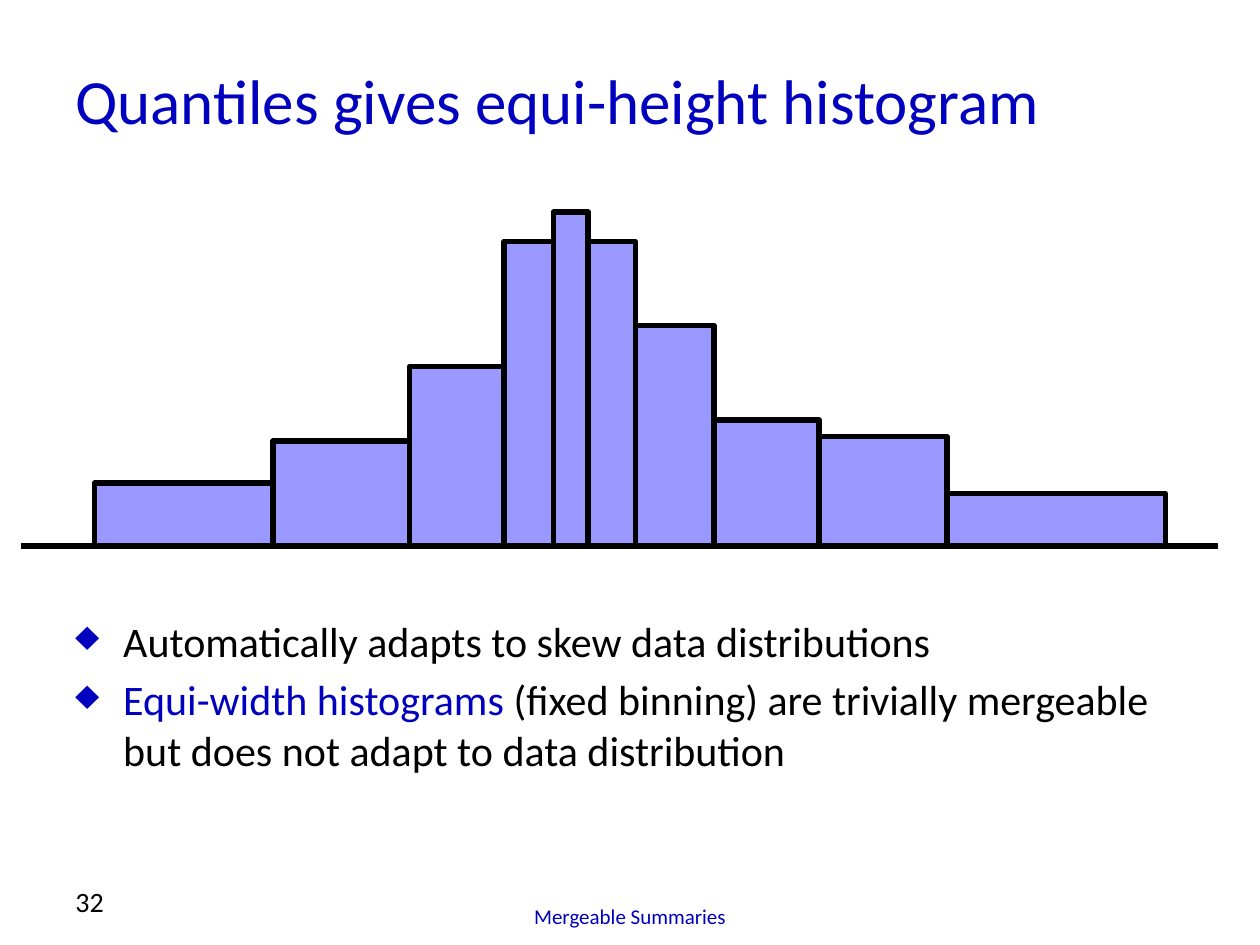
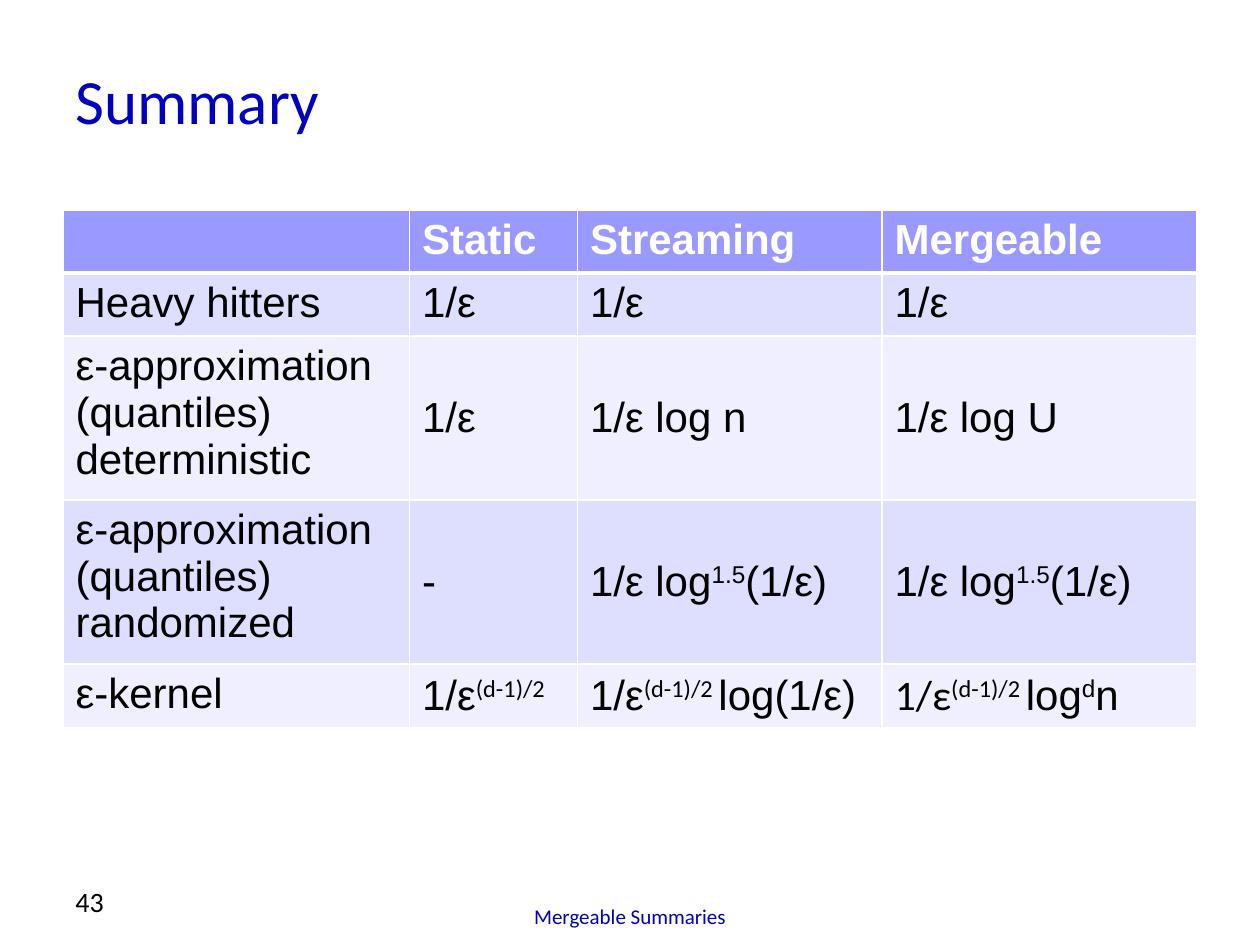
from itertools import accumulate
from lxml.etree import SubElement
from pptx import Presentation
from pptx.dml.color import RGBColor
from pptx.enum.shapes import MSO_CONNECTOR as Connector, MSO_SHAPE as Shape
from pptx.enum.text import MSO_ANCHOR as Anchor, PP_ALIGN as Align
from pptx.oxml.ns import qn
from pptx.util import Inches, Pt

COLORS = {
    "blue": "0000BE",
    "bar": "9999FF",
    "band_dark": "DEDEFF",
    "band_light": "EFEFFF",
    "ink": "000000",
    "white": "FFFFFF",
}
COLUMNS, ROWS = 120, 90
CELL = Inches(10) // COLUMNS


def grid(*units):
    return [round(unit * CELL) for unit in units]


def rgb(name):
    return RGBColor.from_string(COLORS[name])


class Deck:
    body_font = "Calibri"
    table_font = "Arial"
    footer = "Mergeable Summaries"

    def __init__(self):
        self.show = Presentation()
        self.show.slide_width, self.show.slide_height = grid(COLUMNS, ROWS)
        self.slide = None

    def start(self, title, number):
        self.slide = self.show.slides.add_slide(self.show.slide_layouts[6])
        self.text((6, 4, 114, 11), title, 36, "blue", Anchor.MIDDLE)
        self.text((31, 83, 58, 6), self.footer, 12, "blue", Anchor.BOTTOM, Align.CENTER)
        self.text((6, 82, 28, 6), number, 16, "ink", Anchor.BOTTOM)

    def run(self, paragraph, words, size, color, font=None, bold=False, raised=False):
        run = paragraph.add_run()
        run.text = words
        run.font.size = Pt(size)
        run.font.name = font or self.body_font
        run.font.bold = bold
        run.font.color.rgb = rgb(color)
        if raised:
            run.font._element.set("baseline", "30000")

    def frame(self, area, anchor):
        frame = self.slide.shapes.add_textbox(*grid(*area)).text_frame
        frame.word_wrap = True
        frame.vertical_anchor = anchor
        return frame

    def text(self, area, words, size, color, anchor, align=Align.LEFT):
        paragraph = self.frame(area, anchor).paragraphs[0]
        paragraph.alignment = align
        self.run(paragraph, words, size, color)

    def bullets(self, area, points, size=24):
        frame = self.frame(area, Anchor.TOP)
        for index, point in enumerate(points):
            paragraph = frame.add_paragraph() if index else frame.paragraphs[0]
            if index:
                paragraph.space_before = Pt(size * 0.2)
            props = paragraph._p.get_or_add_pPr()
            props.set("marL", str(Inches(0.38)))
            props.set("indent", str(-Inches(0.38)))
            tint = SubElement(props, qn("a:buClr"))
            SubElement(tint, qn("a:srgbClr"), val=COLORS["blue"])
            SubElement(props, qn("a:buChar"), char="♦")
            for words, color in point:
                self.run(paragraph, words, size, color)

    def axis(self, left, right, level):
        ends = grid(left, level, right, level)
        line = self.slide.shapes.add_connector(Connector.STRAIGHT, *ends)
        line.line.color.rgb = rgb("ink")
        line.line.width = Pt(3)
        SubElement(line._element.spPr, qn("a:effectLst"))

    def bar(self, left, width, height, base):
        area = grid(left, base - height, width, height)
        bar = self.slide.shapes.add_shape(Shape.RECTANGLE, *area)
        bar.shadow.inherit = False
        bar.fill.solid()
        bar.fill.fore_color.rgb = rgb("bar")
        bar.line.color.rgb = rgb("ink")
        bar.line.width = Pt(3)

    def histogram(self, left, base, bins):
        starts = accumulate((width for width, _ in bins), initial=left)
        for start, (width, height) in zip(starts, bins):
            self.bar(start, width, height, base)

    def cell(self, cell, lines, row, anchor):
        header = row == 0
        props = cell._tc.get_or_add_tcPr()
        widths = {"lnL": 1, "lnR": 1, "lnT": 3 if row == 1 else 1, "lnB": 3 if header else 1}
        for edge, width in widths.items():
            border = SubElement(props, qn(f"a:{edge}"), w=str(Pt(width)))
            paint = SubElement(border, qn("a:solidFill"))
            SubElement(paint, qn("a:srgbClr"), val=COLORS["white"])
        band = "bar" if header else "band_dark" if row % 2 else "band_light"
        cell.fill.solid()
        cell.fill.fore_color.rgb = rgb(band)
        cell.vertical_anchor = anchor
        frame = cell.text_frame
        for index, line in enumerate(lines):
            paragraph = frame.add_paragraph() if index else frame.paragraphs[0]
            for words, style in line:
                look = {"font": self.table_font, "bold": header, **style}
                self.run(paragraph, words, 24, "white" if header else "ink", **look)

    def table(self, left, top, widths, heights, rows):
        area = grid(left, top, sum(widths), sum(heights))
        table = self.slide.shapes.add_table(len(rows), len(widths), *area).table
        for column, width in zip(table.columns, grid(*widths)):
            column.width = width
        for row, height in zip(table.rows, grid(*heights)):
            row.height = height
        for r, row in enumerate(rows):
            for c, lines in enumerate(row):
                anchor = Anchor.MIDDLE if r > 1 and c else Anchor.TOP
                self.cell(table.cell(r, c), lines, r, anchor)


def plain(*lines):
    return [[(line, {})] for line in lines]


def formula(*parts):
    return [[part if isinstance(part, tuple) else (part, {}) for part in parts]]


def quantile_slide(deck):
    deck.start("Quantiles gives equi-height histogram", "32")
    deck.bullets((6, 58, 108, 19), [
        [("Automatically adapts to skew data distributions", "ink")],
        [("Equi-width histograms ", "blue"),
         ("(fixed binning) are trivially mergeable but does not adapt to data distribution",
          "ink")],
    ])
    deck.axis(2, 116, 52)
    deck.histogram(9, 52, [
        (17, 6), (13, 10), (9, 17.1), (4.7, 29), (3.3, 31.8),
        (4.5, 29), (7.5, 21), (10, 12), (12.2, 10.4), (20.8, 5),
    ])


def summary_slide(deck):
    deck.start("Summary", "43")
    calibri = {"font": deck.body_font}
    raised = {"raised": True}
    exponent = {**calibri, **raised}
    log_power = formula("1/ε log", ("1.5", raised), "(1/ε)")
    deck.table(6, 20, (33, 16, 29, 30), (5.9, 5.7, 14.6, 14.6, 6.1), [
        [[], *map(plain, ("Static", "Streaming", "Mergeable"))],
        [plain("Heavy hitters"), *[plain("1/ε")] * 3],
        [plain("ε-approximation", "(quantiles)", "deterministic"),
         *map(plain, ("1/ε", "1/ε log n", "1/ε log U"))],
        [plain("ε-approximation", "(quantiles)", "randomized"),
         plain("-"), log_power, log_power],
        [plain("ε-kernel"),
         formula("1/ε", ("(d-1)/2", exponent)),
         formula("1/ε", ("(d-1)/2 ", exponent), "log(1/ε)"),
         formula(("1/ε", calibri), ("(d-1)/2 ", exponent), "log", ("d", raised), "n")],
    ])


def main():
    deck = Deck()
    quantile_slide(deck)
    summary_slide(deck)
    deck.show.save("out.pptx")


if __name__ == "__main__":
    main()
